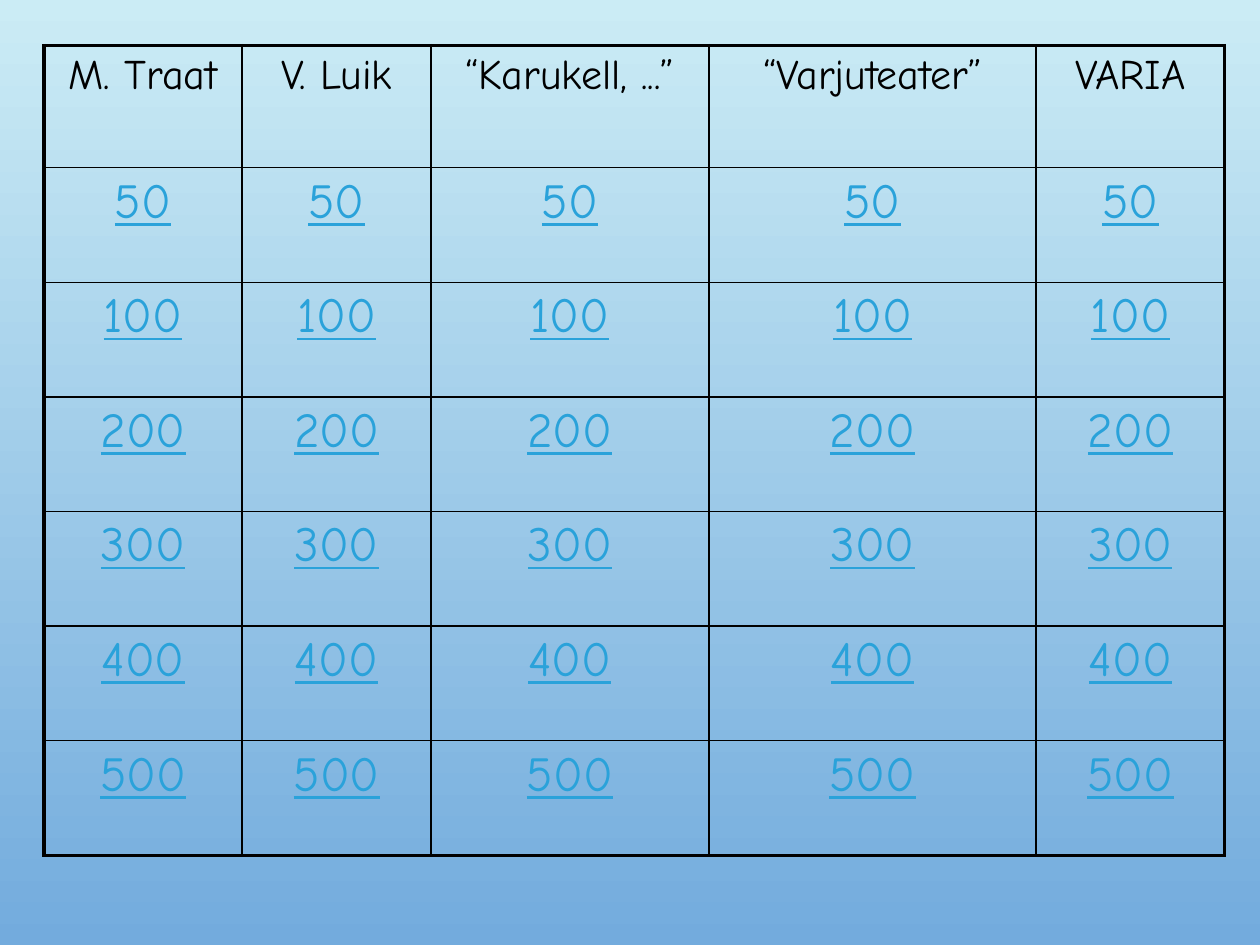
from lxml import etree
from pptx import Presentation
from pptx.dml.color import RGBColor
from pptx.enum.text import PP_ALIGN as Align
from pptx.oxml.ns import qn
from pptx.util import Cm, Pt

FONT = "Comic Neue"
BLACK = RGBColor(0x00, 0x00, 0x00)
LINK_BLUE = RGBColor(0x2A, 0xA2, 0xDA)
SKY_TOP = RGBColor(0xCB, 0xEC, 0xF5)
SKY_BOTTOM = RGBColor(0x73, 0xAB, 0xDD)

CATEGORIES = ["M. Traat", "V. Luik", "“Karukell, ...”", "“Varjuteater”", "VARIA"]
POINTS = [50, 100, 200, 300, 400, 500]
COL_WIDTHS = [3.99, 3.81, 5.6, 6.6, 3.8]
HEADER_HEIGHT, ROW_HEIGHT = 2.46, 2.31
OUTER, INNER = Pt(2.25), Pt(1)


def set_background(s):
    fill = s.background.fill
    fill.gradient()
    fill.gradient_angle = 270
    for stop, color in zip(fill.gradient_stops, (SKY_TOP, SKY_BOTTOM)):
        stop.color.rgb = color


def set_borders(cell, widths):
    tc_pr = cell._tc.get_or_add_tcPr()
    for side, width in zip("LRTB", widths):
        ln = etree.SubElement(tc_pr, qn(f"a:ln{side}"), w=str(width))
        solid = etree.SubElement(ln, qn("a:solidFill"))
        etree.SubElement(solid, qn("a:srgbClr"), val=str(BLACK))


def set_text(cell, text, size, color, underline):
    cell.text_frame.text = text
    p = cell.text_frame.paragraphs[0]
    p.alignment = Align.CENTER
    font = p.runs[0].font
    font.name, font.size = FONT, Pt(size)
    font.color.rgb = color
    font.underline = underline


def add_board(s):
    rows = [CATEGORIES] + [[str(n)] * len(CATEGORIES) for n in POINTS]
    heights = [HEADER_HEIGHT] + [ROW_HEIGHT] * len(POINTS)
    table = s.shapes.add_table(
        len(rows), len(CATEGORIES), Cm(0.89), Cm(0.92),
        Cm(sum(COL_WIDTHS)), Cm(sum(heights))).table
    table.first_row = table.horz_banding = False
    for col, width in zip(table.columns, COL_WIDTHS):
        col.width = Cm(width)
    for row, height in zip(table.rows, heights):
        row.height = Cm(height)

    last_row, last_col = len(rows) - 1, len(CATEGORIES) - 1
    for i, texts in enumerate(rows):
        for j, text in enumerate(texts):
            cell = table.cell(i, j)
            # Thick frame around the board, thin lines inside
            on_edge = (j == 0, j == last_col, i == 0, i == last_row)
            set_borders(cell, [OUTER if edge else INNER for edge in on_edge])
            cell.fill.background()
            # Category names on top, underlined point values below
            if i == 0:
                set_text(cell, text, 24, BLACK, False)
            else:
                set_text(cell, text, 28, LINK_BLUE, True)


def main():
    prs = Presentation()
    prs.slide_width, prs.slide_height = Cm(25.4), Cm(19.05)
    s = prs.slides.add_slide(prs.slide_layouts[6])
    set_background(s)
    add_board(s)
    prs.save("out.pptx")


if __name__ == "__main__":
    main()
